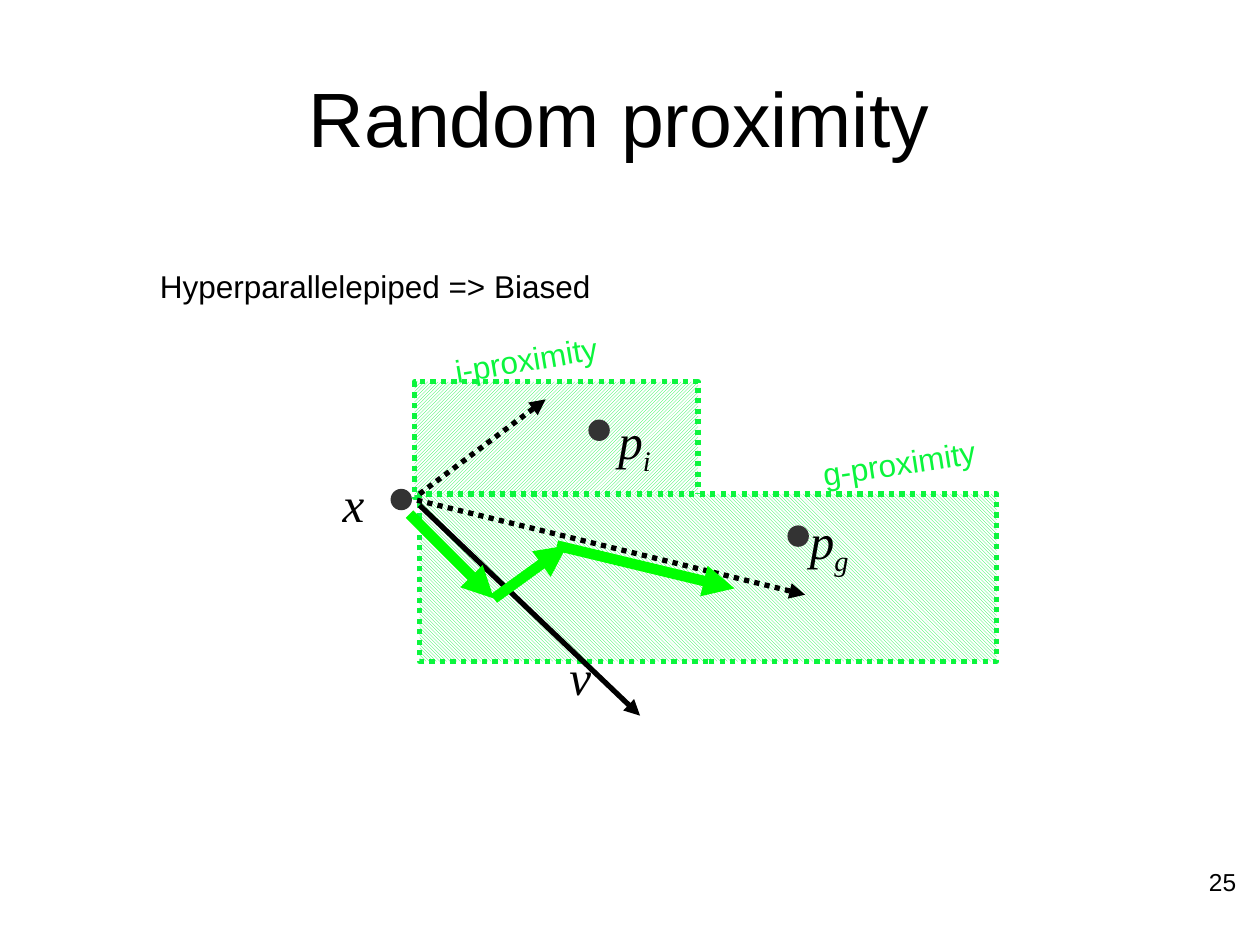
from lxml import etree
from pptx import Presentation
from pptx.dml.color import RGBColor
from pptx.enum import dml, shapes, text
from pptx.oxml.ns import qn
from pptx.util import Inches, Pt

BLACK = RGBColor(0x00, 0x00, 0x00)
WHITE = RGBColor(0xFF, 0xFF, 0xFF)
DOT_GREY = RGBColor(0x33, 0x33, 0x33)
AREA_GREEN = RGBColor(0x0B, 0xF5, 0x3D)
PATH_GREEN = RGBColor(0x00, 0xFF, 0x00)


def add_arrow(parent, start, end, color, width, dotted=False):
    points = [Inches(value) for value in (*start, *end)]
    connector = parent.add_connector(shapes.MSO_CONNECTOR.STRAIGHT, *points)
    connector.line.color.rgb = color
    connector.line.width = Pt(width)
    if dotted:
        connector.line.dash_style = dml.MSO_LINE.ROUND_DOT
    properties = connector._element.spPr
    etree.SubElement(properties.find(qn("a:ln")), qn("a:tailEnd"), type="triangle")
    etree.SubElement(properties, qn("a:effectLst"))


def add_label(box, words, size, font, color=BLACK, rotation=0,
              anchor=text.MSO_ANCHOR.MIDDLE):
    label = slide.shapes.add_textbox(*[Inches(value) for value in box])
    label.rotation = rotation
    label.text_frame.word_wrap = True
    label.text_frame.vertical_anchor = anchor
    paragraph = label.text_frame.paragraphs[0]
    paragraph.add_run().text = words
    paragraph.font.size = Pt(size)
    paragraph.font.name = font
    paragraph.font.color.rgb = color
    return paragraph


presentation = Presentation()
presentation.slide_width = Inches(10)
presentation.slide_height = Inches(7.5)
slide = presentation.slides.add_slide(presentation.slide_layouts[5])

title = slide.shapes.title
title.left, title.top = Inches(0.5), Inches(0.3)
title.width, title.height = Inches(9), Inches(1.25)
title.text_frame.text = "Random proximity "
title.text_frame.auto_size = text.MSO_AUTO_SIZE.NONE
title.text_frame.vertical_anchor = text.MSO_ANCHOR.MIDDLE
heading = title.text_frame.paragraphs[0]
heading.alignment = text.PP_ALIGN.CENTER
heading.font.size = Pt(44)
heading.font.name = "Arial"
heading.font.color.rgb = BLACK

# Proximity areas
for box, pattern in (
    ((3.29, 3.03, 2.25, 0.92), dml.MSO_PATTERN.LIGHT_UPWARD_DIAGONAL),
    ((3.33, 3.92, 4.58, 1.33), dml.MSO_PATTERN.LIGHT_DOWNWARD_DIAGONAL),
):
    area = slide.shapes.add_shape(
        shapes.MSO_SHAPE.RECTANGLE, *[Inches(value) for value in box])
    area.shadow.inherit = False
    area.fill.patterned()
    area.fill.pattern = pattern
    area.fill.fore_color.rgb = AREA_GREEN
    area.fill.back_color.rgb = WHITE
    area.line.color.rgb = AREA_GREEN
    area.line.width = Pt(3)
    area.line.dash_style = dml.MSO_LINE.ROUND_DOT

# Velocity, and the attractions towards both areas
add_arrow(slide.shapes, (3.33, 4.01), (5.08, 5.68), BLACK, 3)
add_arrow(slide.shapes, (3.33, 3.92), (4.33, 3.17), BLACK, 3, dotted=True)
add_arrow(slide.shapes, (3.31, 3.97), (6.39, 4.72), BLACK, 3, dotted=True)

# Resulting move
move = slide.shapes.add_group_shape()
for start, end in (
    ((3.25, 4.08), (3.92, 4.75)),
    ((3.92, 4.75), (4.5, 4.33)),
    ((4.42, 4.33), (5.83, 4.67)),
):
    add_arrow(move.shapes, start, end, PATH_GREEN, 6)

# Symbols
for box, symbol, subscript, anchor in (
    ((2.62, 3.71, 0.58, 0.57), "x", "", text.MSO_ANCHOR.TOP),
    ((6.33, 4, 0.92, 0.57), "p", "g", text.MSO_ANCHOR.TOP),
    ((4.81, 3.21, 0.58, 0.57), "p", "i", text.MSO_ANCHOR.TOP),
    ((4.42, 5.08, 0.37, 0.57), "v", "", text.MSO_ANCHOR.MIDDLE),
):
    paragraph = add_label(box, symbol, 28, "Times New Roman", anchor=anchor)
    paragraph.font.italic = True
    if subscript:
        run = paragraph.add_run()
        run.text = subscript
        run._r.get_or_add_rPr().set("baseline", "-25000")

# Points
for left, top in ((4.67, 3.33), (6.25, 4.17), (3.1, 3.88)):
    dot = slide.shapes.add_shape(
        shapes.MSO_SHAPE.OVAL, Inches(left), Inches(top), Inches(0.17), Inches(0.17))
    dot.shadow.inherit = False
    dot.fill.solid()
    dot.fill.fore_color.rgb = DOT_GREY
    dot.line.fill.background()

add_label((3.5, 2.42, 2.29, 0.7), "i-proximity", 18, "Arial", AREA_GREEN, 350.4)
add_label((6.42, 3.25, 2.37, 0.7), "g-proximity", 18, "Arial", AREA_GREEN, 351.2)
add_label((1.17, 1.92, 5.91, 0.7), "Hyperparallelepiped => Biased", 18, "Arial")
page_number = add_label((7.58, 6.83, 2.33, 0.52), "25", 14, "Arial",
                        anchor=text.MSO_ANCHOR.TOP)
page_number.alignment = text.PP_ALIGN.RIGHT

presentation.save("out.pptx")
